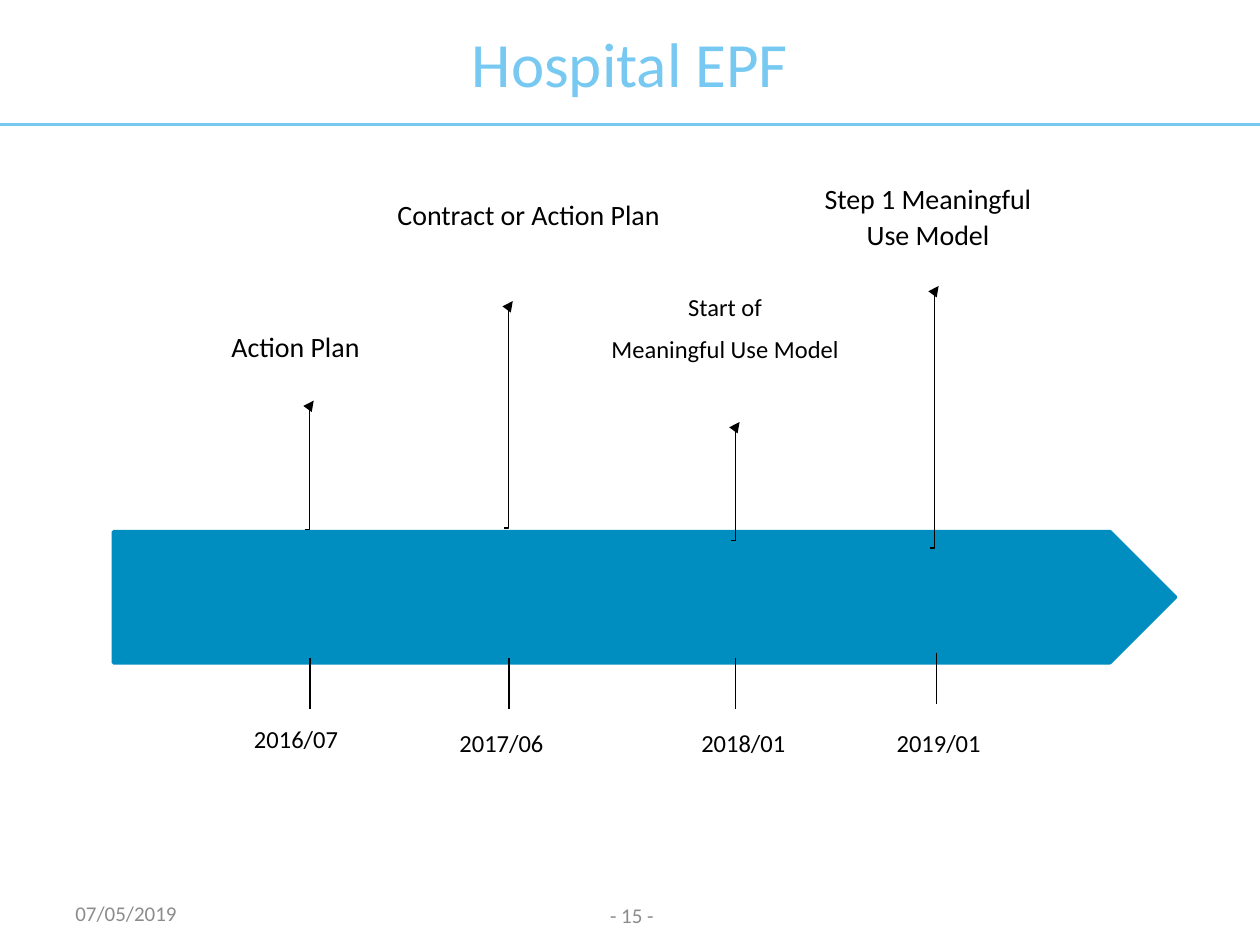
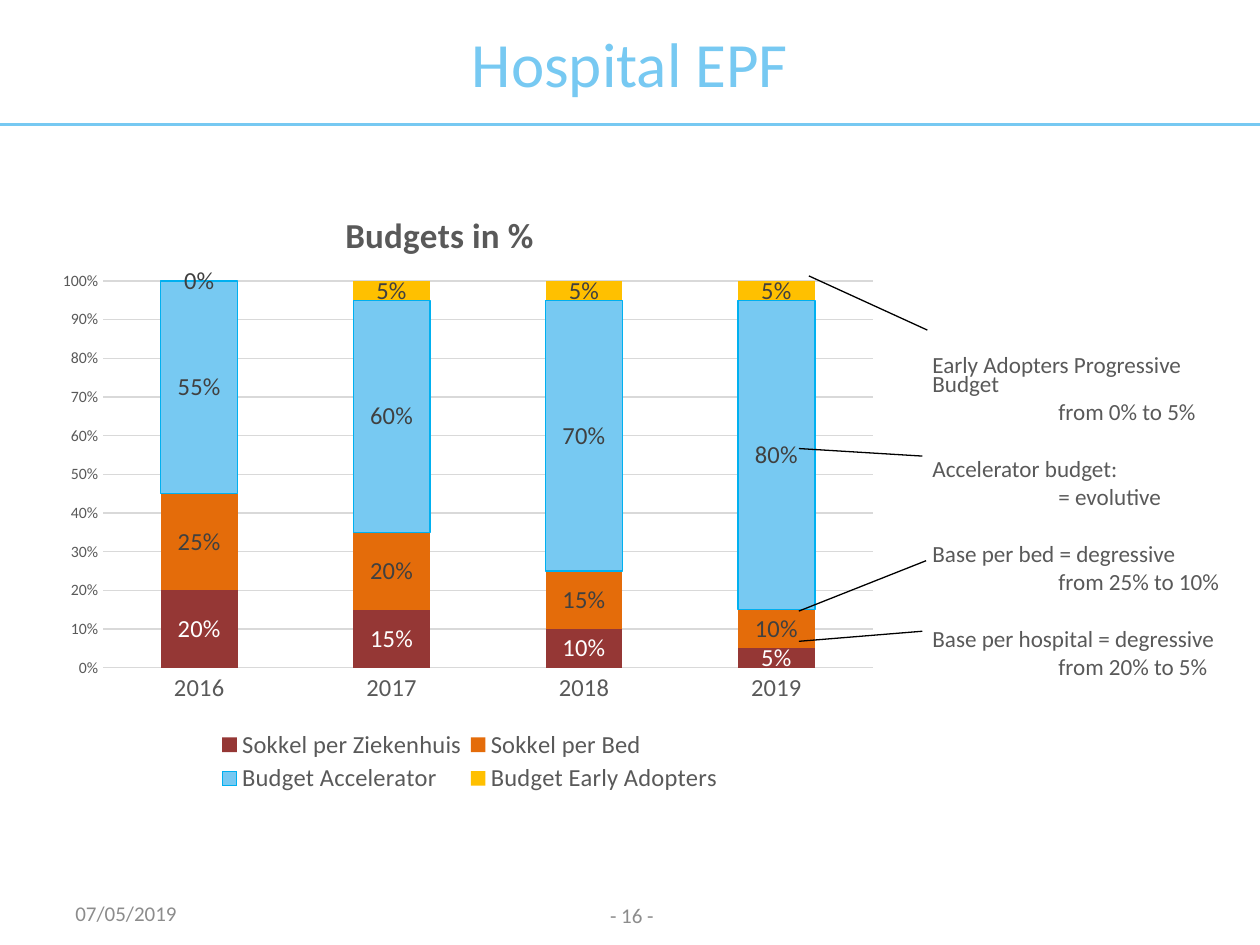
from lxml.etree import SubElement
from pptx import Presentation
from pptx.chart.data import CategoryChartData
from pptx.dml.color import RGBColor
from pptx.enum.chart import XL_CHART_TYPE, XL_LABEL_POSITION, XL_LEGEND_POSITION, XL_TICK_MARK
from pptx.enum.shapes import MSO_CONNECTOR, MSO_SHAPE
from pptx.enum.text import MSO_ANCHOR, MSO_AUTO_SIZE, PP_ALIGN
from pptx.oxml.ns import qn
from pptx.util import Inches, Pt

# Shared look
FONT = "Calibri"
SKY, BLUE, BLACK = "77C9F2", "008EC0", "000000"
GREY, DARK_GREY, FOOTER_GREY, GRID_GREY = "595959", "404040", "8C8C8C", "D9D9D9"
TITLE = "Hospital EPF"
DATE = "07/05/2019"
HEADER_HEIGHT = 0.99

# Timeline: date, date box (left, top), tick (x, top), arrow (left, bottom, top)
MILESTONES = [
    ("2016/07", (1.81, 5.69), (2.46, 5.22), (2.42, 4.2, 3.18)),
    ("2017/06", (3.44, 5.72), (4.04, 5.22), (4, 4.19, 2.39)),
    ("2018/01", (5.36, 5.72), (5.84, 5.22), (5.8, 4.29, 3.35)),
    ("2019/01", (6.91, 5.72), (7.43, 5.18), (7.38, 4.35, 2.27)),
]
# Milestone captions: lines, size, box
CAPTIONS = [
    (["Action Plan"], 16, (1.42, 2.56, 1.85, 0.63)),
    (["Contract or Action Plan"], 16, (3.02, 1.51, 2.35, 0.54)),
    (["Start of", "Meaningful Use Model"], 14, (4.7, 2.26, 2.11, 1.28)),
    (["Step 1 Meaningful Use Model"], 16, (6.31, 1.38, 2.11, 1.08)),
]

# Budgets: name, values, fill, label colour
YEARS = ["2016", "2017", "2018", "2019"]
BUDGETS = [
    ("Sokkel per Ziekenhuis", (0.2, 0.15, 0.1, 0.05), "953735", "FFFFFF"),
    ("Sokkel per Bed", (0.25, 0.2, 0.15, 0.1), "E46C0A", DARK_GREY),
    ("Budget Accelerator", (0.55, 0.6, 0.7, 0.8), SKY, DARK_GREY),
    ("Budget Early Adopters", (0, 0.05, 0.05, 0.05), "FFC000", DARK_GREY),
]
NOTES = [
    ("Early Adopters Progressive Budget", "from 0% to 5%"),
    ("Accelerator budget:", "= evolutive"),
    ("Base per bed = degressive", "from 25% to 10%"),
    ("Base per hospital = degressive", "from 20% to 5%"),
]
NOTE_LINES = [
    (6.42, 2.19, 7.36, 2.62),
    (6.34, 3.56, 7.32, 3.62),
    (6.34, 4.85, 7.35, 4.45),
    (6.34, 5.09, 7.32, 5.01),
]


def color(hex_value):
    return RGBColor.from_string(hex_value)


def set_all(target, values):
    for name, value in values.items():
        setattr(target, name, value)


def format_font(font, size, hex_value, bold=False):
    set_all(font, {"name": FONT, "size": Pt(size), "bold": bold})
    font.color.rgb = color(hex_value)


def format_line(line, hex_value, width=0.75):
    line.color.rgb = color(hex_value)
    line.width = Pt(width)


def place(shape, left, top, width, height):
    set_all(shape, {"left": Inches(left), "top": Inches(top),
                    "width": Inches(width), "height": Inches(height)})


def add_line(slide, ends, hex_value=BLACK, width=0.75, kind=MSO_CONNECTOR.STRAIGHT, arrow=False):
    connector = slide.shapes.add_connector(kind, *map(Inches, ends))
    format_line(connector.line, hex_value, width)
    properties = connector.element.spPr
    if arrow:
        SubElement(properties.find(qn("a:ln")), qn("a:tailEnd"), type="triangle")
    SubElement(properties, qn("a:effectLst"))


def add_text(slide, lines, box, size, hex_value=BLACK, align=PP_ALIGN.CENTER,
             anchor=MSO_ANCHOR.TOP, margins=(0.07, 0.04), paragraph_format=None):
    frame = slide.shapes.add_textbox(*map(Inches, box)).text_frame
    side, edge = map(Inches, margins)
    set_all(frame, {"word_wrap": True, "vertical_anchor": anchor,
                    "margin_left": side, "margin_right": side,
                    "margin_top": edge, "margin_bottom": edge})
    frame.text = "\n".join(lines)
    for paragraph in frame.paragraphs:
        set_all(paragraph, {"alignment": align, **(paragraph_format or {})})
        format_font(paragraph.font, size, hex_value)


def add_label(slide, lines, box, size):
    add_text(slide, lines, box, size,
             paragraph_format={"line_spacing": 1.07, "space_after": Pt(6)})


def add_base_slide(presentation, layout_index, number):
    """Slide with title, header rule, date and page number."""
    slide = presentation.slides.add_slide(presentation.slide_layouts[layout_index])
    add_line(slide, (0, HEADER_HEIGHT, 10, HEADER_HEIGHT), SKY, 1.5)
    title = slide.shapes.title
    place(title, 0, 0, 10, HEADER_HEIGHT)
    title.text_frame.text = TITLE
    title.text_frame.vertical_anchor = MSO_ANCHOR.MIDDLE
    paragraph = title.text_frame.paragraphs[0]
    paragraph.alignment = PP_ALIGN.CENTER
    format_font(paragraph.font, 36, SKY)
    for text, left, top, align in ((DATE, 0.5, 7.05, PP_ALIGN.LEFT),
                                   (f"- {number} -", 3.85, 7.06, PP_ALIGN.CENTER)):
        add_text(slide, [text], (left, top, 2.33, 0.4), 12, FOOTER_GREY, align,
                 MSO_ANCHOR.MIDDLE, (0.1, 0.05))
    return slide


def add_timeline(slide):
    band = slide.shapes.add_shape(MSO_SHAPE.PENTAGON, *map(Inches, (0.9, 4.22, 8.43, 1.04)))
    band.shadow.inherit = False
    band.fill.solid()
    band.fill.fore_color.rgb = color(BLUE)
    format_line(band.line, BLUE, 2)
    for date, (left, top), (tick_x, tick_top), (arrow_x, bottom, tip) in MILESTONES:
        add_line(slide, (arrow_x, bottom, arrow_x + 0.07, tip),
                 kind=MSO_CONNECTOR.ELBOW, arrow=True)
        add_line(slide, (tick_x, tick_top, tick_x, tick_top + 0.41))
        add_label(slide, [date], (left, top, 1.08, 0.63), 14)
    for lines, size, box in CAPTIONS:
        add_label(slide, lines, box, size)


def fill_notes(placeholder):
    place(placeholder, 6.8, 2.79, 3.19, 3)
    frame = placeholder.text_frame
    frame.auto_size = MSO_AUTO_SIZE.NONE
    frame.text = "\n".join(line for note in NOTES for line in note)
    for index, paragraph in enumerate(frame.paragraphs):
        is_detail = index % 2 == 1
        properties = paragraph._p.get_or_add_pPr()
        properties.set("marL", str(Inches(1.5 if is_detail else 0.5)))
        properties.set("indent", "0")
        SubElement(properties, qn("a:buNone"))
        space = 0 if index == 0 else 5 if is_detail else 21.3
        set_all(paragraph, {"line_spacing": 0.7, "space_before": Pt(space)})
        format_font(paragraph.font, 13.2, GREY)


def set_layout(element, index, **fractions):
    """Fix a chart part at fractions of the chart area."""
    for old_layout in element.findall(qn("c:layout")):
        element.remove(old_layout)
    layout = element.makeelement(qn("c:layout"))
    element.insert(index, layout)
    manual = SubElement(layout, qn("c:manualLayout"))
    if element.tag == qn("c:plotArea"):
        SubElement(manual, qn("c:layoutTarget"), val="inner")
    for axis in "xy":
        SubElement(manual, qn(f"c:{axis}Mode"), val="edge")
    for name, value in fractions.items():
        SubElement(manual, qn(f"c:{name}"), val=str(value))


def format_axes(chart):
    for axis, size in ((chart.category_axis, 14), (chart.value_axis, 9)):
        set_all(axis, {"major_tick_mark": XL_TICK_MARK.NONE,
                       "minor_tick_mark": XL_TICK_MARK.NONE})
        format_font(axis.tick_labels.font, size, GREY)
    format_line(chart.category_axis.format.line, GRID_GREY)
    value_axis = chart.value_axis
    set_all(value_axis, {"minimum_scale": 0, "maximum_scale": 1, "major_unit": 0.1})
    set_all(value_axis.tick_labels, {"number_format": "0%", "number_format_is_linked": False})
    value_axis.format.line.fill.background()
    format_line(value_axis.major_gridlines.format.line, GRID_GREY)


def add_budget_chart(slide):
    data = CategoryChartData(number_format="0%")
    data.categories = YEARS
    for name, values, _, _ in BUDGETS:
        data.add_series(name, values)
    chart = slide.shapes.add_chart(XL_CHART_TYPE.COLUMN_STACKED,
                                   *map(Inches, (0.35, 1.47, 6.69, 4.88)), data).chart
    format_font(chart.font, 10, BLACK)
    format_axes(chart)

    # Series and their labels
    plot = chart.plots[0]
    set_all(plot, {"gap_width": 150, "overlap": 100, "vary_by_categories": False})
    for series, (name, _, fill, label_color) in zip(plot.series, BUDGETS):
        series.format.fill.solid()
        series.format.fill.fore_color.rgb = color(fill)
        if name == "Budget Accelerator":
            format_line(series.format.line, "00B0F0")
        labels = series.data_labels
        set_all(labels, {"show_value": True, "number_format": "0%",
                         "number_format_is_linked": False,
                         "position": XL_LABEL_POSITION.CENTER})
        format_font(labels.font, 14, label_color)

    # Title, legend and plot area
    title_frame = chart.chart_title.text_frame
    title_frame.text = "Budgets in %"
    format_font(title_frame.paragraphs[0].runs[0].font, 20, GREY, bold=True)
    chart.has_legend = True
    legend = chart.legend
    set_all(legend, {"position": XL_LEGEND_POSITION.BOTTOM, "include_in_layout": False})
    format_font(legend.font, 14, GREY)
    chart_element = chart.element.chart
    set_layout(chart_element.find(qn("c:title")), 1, x=0.35, y=0.03)
    set_layout(chart_element.plotArea, 0, x=0.07, y=0.156, w=0.913, h=0.629)
    set_layout(chart_element.find(qn("c:legend")), 1, x=0.2, y=0.88, w=0.61, h=0.115)


def main():
    presentation = Presentation()
    set_all(presentation, {"slide_width": Inches(10), "slide_height": Inches(7.5)})

    add_timeline(add_base_slide(presentation, 5, 15))

    budget_slide = add_base_slide(presentation, 1, 16)
    fill_notes(budget_slide.placeholders[1])
    add_budget_chart(budget_slide)
    for ends in NOTE_LINES:
        add_line(budget_slide, ends)

    presentation.save("out.pptx")


if __name__ == "__main__":
    main()
